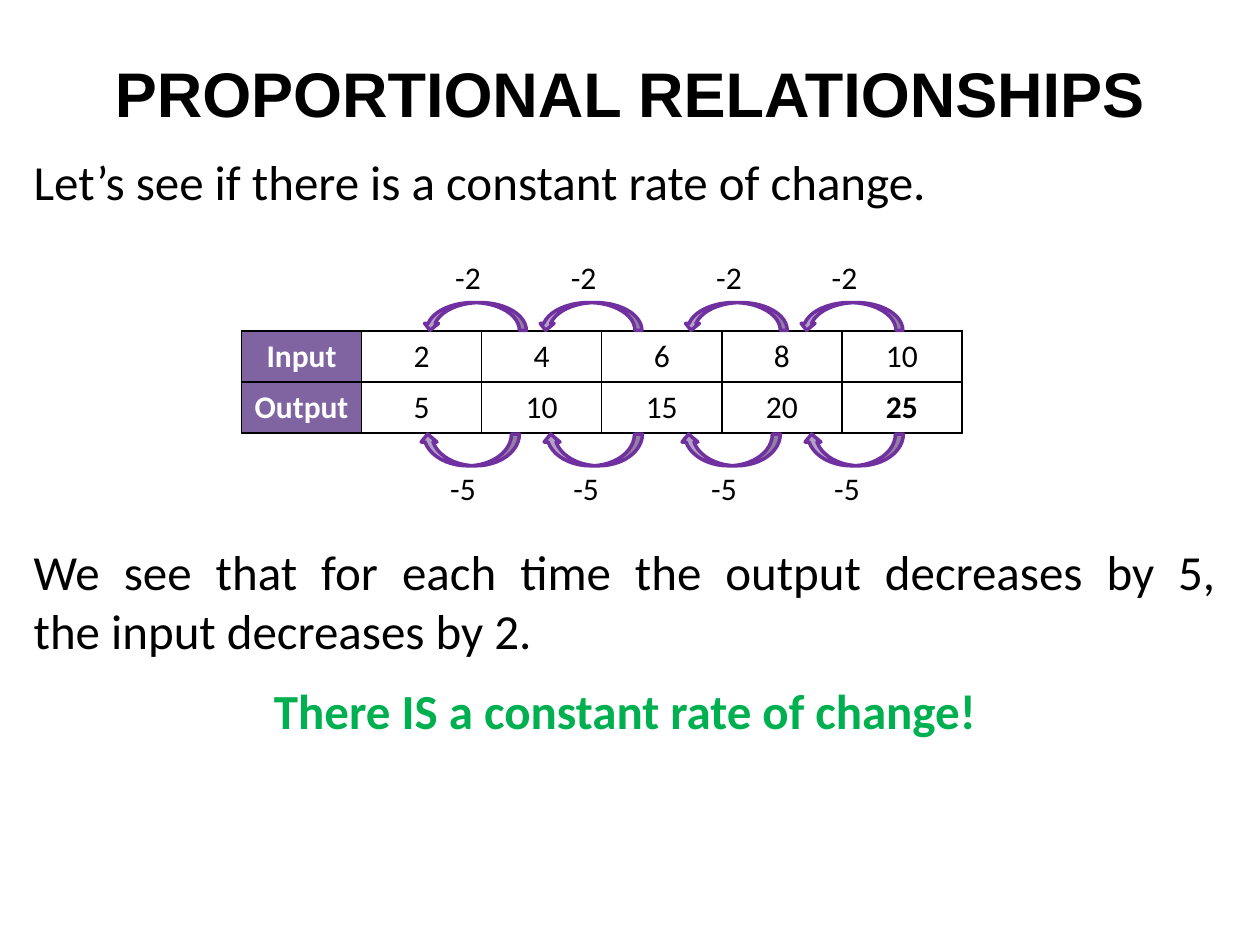
from itertools import product

from lxml.etree import SubElement
from pptx import Presentation
from pptx.dml.color import RGBColor
from pptx.enum.shapes import MSO_SHAPE
from pptx.enum.text import MSO_ANCHOR, MSO_AUTO_SIZE, PP_ALIGN
from pptx.oxml.ns import qn
from pptx.util import Cm, Pt

BLACK, WHITE, GREEN = "000000", "FFFFFF", "00B050"
HEADER, ARROW, OUTLINE = "8064A2", "B3A2C7", "7030A0"


def color(value):
    return RGBColor.from_string(value)


class Deck:
    font = "Calibri"

    def __init__(self, width, height):
        self.prs = Presentation()
        self.prs.slide_width, self.prs.slide_height = Cm(width), Cm(height)
        self.s = self.prs.slides.add_slide(self.prs.slide_layouts[6])

    def paragraph(self, p, text, size, align=PP_ALIGN.CENTER, fill=BLACK, bold=False, font=None):
        p.text = text
        p.alignment = align
        p.font.name = font or self.font
        p.font.size = Pt(size)
        p.font.bold = bold
        p.font.color.rgb = color(fill)

    def text(self, x, y, w, h, text, size, anchor=MSO_ANCHOR.TOP, **style):
        tf = self.s.shapes.add_textbox(Cm(x), Cm(y), Cm(w), Cm(h)).text_frame
        tf.word_wrap = True
        tf.auto_size = MSO_AUTO_SIZE.NONE
        tf.vertical_anchor = anchor
        self.paragraph(tf.paragraphs[0], text, size, **style)
        return tf

    def arrow(self, x, y, w, h, flip=False):
        sp = self.s.shapes.add_shape(MSO_SHAPE.CURVED_DOWN_ARROW, Cm(x), Cm(y), Cm(w), Cm(h))
        sp.shadow.inherit = False
        sp.rotation = 180
        if flip:
            sp.element.spPr.find(qn("a:xfrm")).set("flipV", "1")
        sp.fill.solid()
        sp.fill.fore_color.rgb = color(ARROW)
        sp.line.color.rgb = color(OUTLINE)
        sp.line.width = Pt(2)

    def borders(self, cell):
        tcPr = cell._tc.get_or_add_tcPr()
        for i, side in enumerate(("a:lnL", "a:lnR", "a:lnT", "a:lnB")):
            ln = tcPr.makeelement(qn(side), {"w": str(Pt(1))})
            SubElement(SubElement(ln, qn("a:solidFill")), qn("a:srgbClr"), val=BLACK)
            tcPr.insert(i, ln)

    def table(self, x, y, col_width, row_height, rows, bold_values):
        n_rows, n_cols = len(rows), len(rows[0])
        table = self.s.shapes.add_table(
            n_rows, n_cols, Cm(x), Cm(y), Cm(col_width * n_cols), Cm(row_height * n_rows)
        ).table
        for column in table.columns:
            column.width = Cm(col_width)
        for row, values in zip(table.rows, rows):
            row.height = Cm(row_height)
            for i, (cell, value) in enumerate(zip(row.cells, values)):
                header = i == 0
                cell.fill.solid()
                cell.fill.fore_color.rgb = color(HEADER if header else WHITE)
                cell.vertical_anchor = MSO_ANCHOR.MIDDLE
                cell.margin_left = cell.margin_right = Cm(0.15)
                self.paragraph(cell.text_frame.paragraphs[0], value, 18,
                               fill=WHITE if header else BLACK,
                               bold=header or value in bold_values)
                self.borders(cell)

    def save(self):
        self.prs.save("out.pptx")


def main():
    deck = Deck(25.4, 19.05)
    deck.text(0, 0.81, 25.4, 2.11, "PROPORTIONAL RELATIONSHIPS", 36,
              anchor=MSO_ANCHOR.MIDDLE, bold=True, font="Arial")
    deck.text(0.43, 2.92, 24.33, 1.45, "Let’s see if there is a constant rate of change.", 28,
              align=PP_ALIGN.JUSTIFY)
    deck.table(4.87, 6.67, 2.42, 1.03,
               [["Input", "2", "4", "6", "8", "10"],
                ["Output", "5", "10", "15", "20", "25"]], {"25"})

    tf = deck.text(0.43, 10.8, 24.33, 4.27,
                   "We see that for each time the output decreases by 5,\nthe input decreases by 2.",
                   28, align=PP_ALIGN.JUSTIFY)
    tf.paragraphs[0].space_after = Pt(12)
    deck.paragraph(tf.add_paragraph(), "There IS a constant rate of change!", 28,
                   fill=GREEN, bold=True)

    pair_gap = 5.26
    for pair, step in product(range(2), range(2)):
        top_x = 8.53 + pair * pair_gap + step * 2.33
        deck.arrow(top_x, 6.1, 2.08, 0.56, flip=True)
        deck.text(top_x + 0.18, 5.08, 1.45, 1.02, "-2", 18)
        bottom_x = 8.46 + pair * pair_gap + step * 2.48
        deck.arrow(bottom_x, 8.75, 2.01, 0.64)
        deck.text(bottom_x + 0.15, 9.33, 1.45, 1.02, "-5", 18)

    deck.save()


if __name__ == "__main__":
    main()
